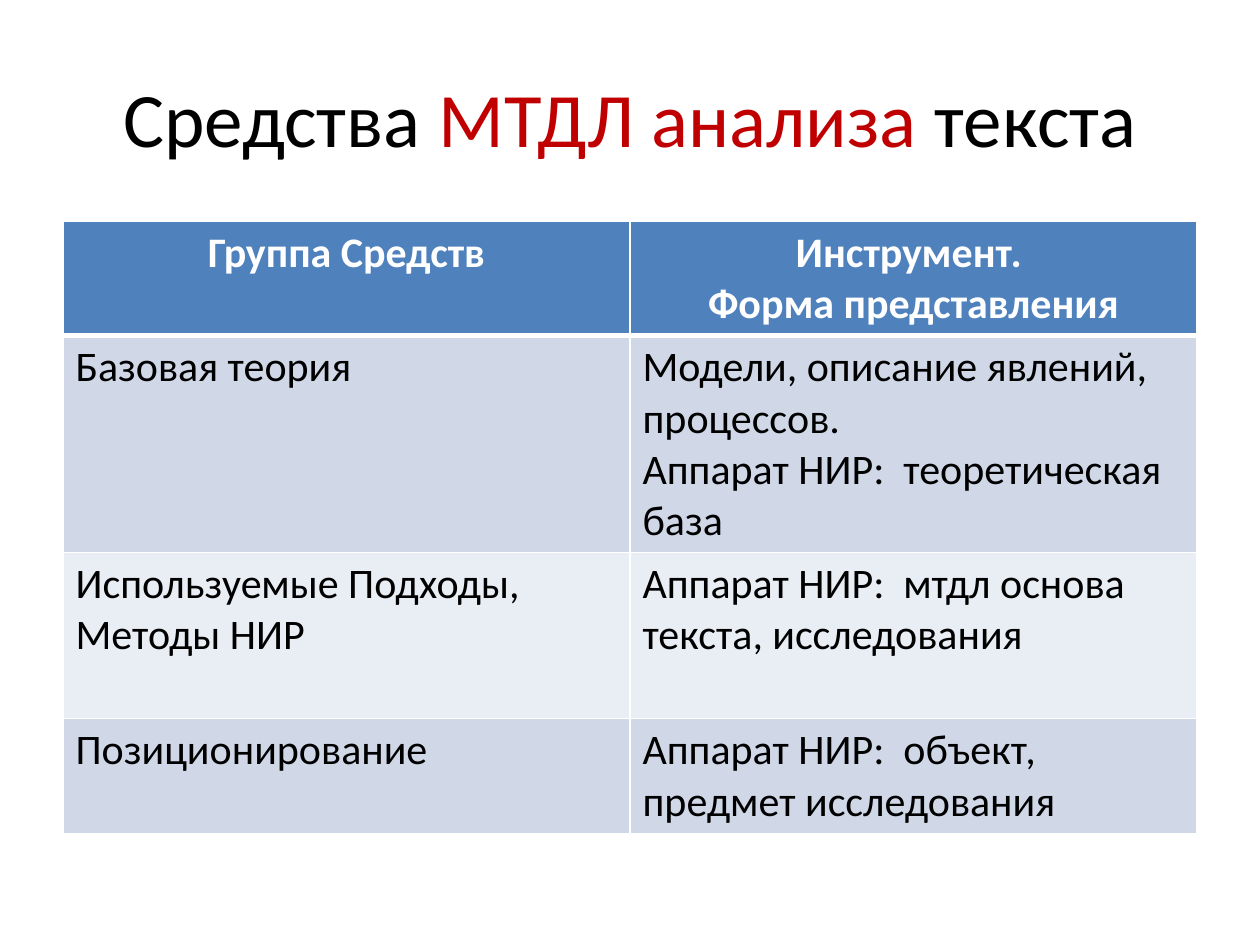
import pptx
import pptx.dml.color
import pptx.enum.text
import pptx.oxml
import pptx.oxml.ns
import pptx.util

ALIGN = pptx.enum.text.PP_ALIGN
ANCHOR = pptx.enum.text.MSO_ANCHOR


def tint(code):
    return pptx.dml.color.RGBColor.from_string(code)


def write(frame, text, font="Calibri", size=24, color="000000",
          bold=False, align=ALIGN.LEFT):
    """Fill a frame; each line is a list of (text, color) runs or a string."""
    for num, line in enumerate(text):
        para = frame.paragraphs[0] if num == 0 else frame.add_paragraph()
        para.alignment = align
        runs = [(line, color)] if isinstance(line, str) else line
        for words, shade in runs:
            run = para.add_run()
            run.text = words
            run.font.name = font
            run.font.size = pptx.util.Pt(size)
            run.font.bold = bold
            run.font.color.rgb = tint(shade)


class Deck:
    ink, accent, white = "000000", "C00000", "FFFFFF"
    head, bands = "4F81BD", ("D0D8E8", "E9EDF4")

    def __init__(self, wide, high):
        self.file = pptx.Presentation()
        self.file.slide_width = pptx.util.Inches(wide)
        self.file.slide_height = pptx.util.Inches(high)
        self.slide = self.file.slides.add_slide(self.file.slide_layouts[6])

    def box(self, left, top, width, height):
        """Turn shares of the slide into lengths."""
        wide, high = self.file.slide_width, self.file.slide_height
        return (int(left * wide), int(top * high),
                int(width * wide), int(height * high))

    def title(self, place, line):
        frame = self.slide.shapes.add_textbox(*self.box(*place)).text_frame
        frame.word_wrap = True
        frame.vertical_anchor = ANCHOR.MIDDLE
        write(frame, [line], size=44, align=ALIGN.CENTER)

    def edge(self, cell, side, width):
        """Add one white border; call in the order L, R, T, B."""
        space = pptx.oxml.ns.nsdecls("a")
        line = pptx.oxml.parse_xml(
            f'<a:{side} {space} w="{pptx.util.Pt(width)}"><a:solidFill>'
            f'<a:srgbClr val="{self.white}"/></a:solidFill></a:{side}>')
        cell._tc.get_or_add_tcPr().append(line)

    def table(self, place, rows, shares):
        spot = self.box(*place)
        grid = self.slide.shapes.add_table(len(rows), len(rows[0]), *spot).table
        for num, (row, share) in enumerate(zip(rows, shares)):
            grid.rows[num].height = int(spot[3] * share / sum(shares))
            for col, text in enumerate(row):
                self.cell(grid.cell(num, col), text, num)

    def cell(self, cell, text, num):
        first = num == 0
        for side in ("lnL", "lnR", "lnT", "lnB"):
            thick = (first and side == "lnB") or (num == 1 and side == "lnT")
            self.edge(cell, side, 3 if thick else 1)
        cell.fill.solid()
        cell.fill.fore_color.rgb = tint(
            self.head if first else self.bands[(num - 1) % 2])
        write(cell.text_frame, text, bold=first,
              color=self.white if first else self.ink,
              align=ALIGN.CENTER if first else ALIGN.LEFT)


def main():
    deck = Deck(10, 7.5)

    # Title with the key term in red
    deck.title((0.05, 0.04, 0.9, 1 / 6), [
        ("Средства ", deck.ink),
        ("МТДЛ анализа ", deck.accent),
        ("текста", deck.ink),
    ])

    # Groups of means and their tools
    rows = [
        (["Группа Средств"], ["Инструмент. ", "Форма представления"]),
        (["Базовая теория"],
         ["Модели, описание явлений, процессов.",
          "Аппарат НИР:  теоретическая база"]),
        (["Используемые Подходы, Методы НИР"],
         ["Аппарат НИР:  мтдл основа текста, исследования"]),
        (["Позиционирование"],
         ["Аппарат НИР:  объект, предмет исследования"]),
    ]
    deck.table((0.05, 0.234, 0.9, 0.648), rows, (0.91, 1.72, 1.32, 0.91))

    deck.file.save("out.pptx")


if __name__ == "__main__":
    main()
